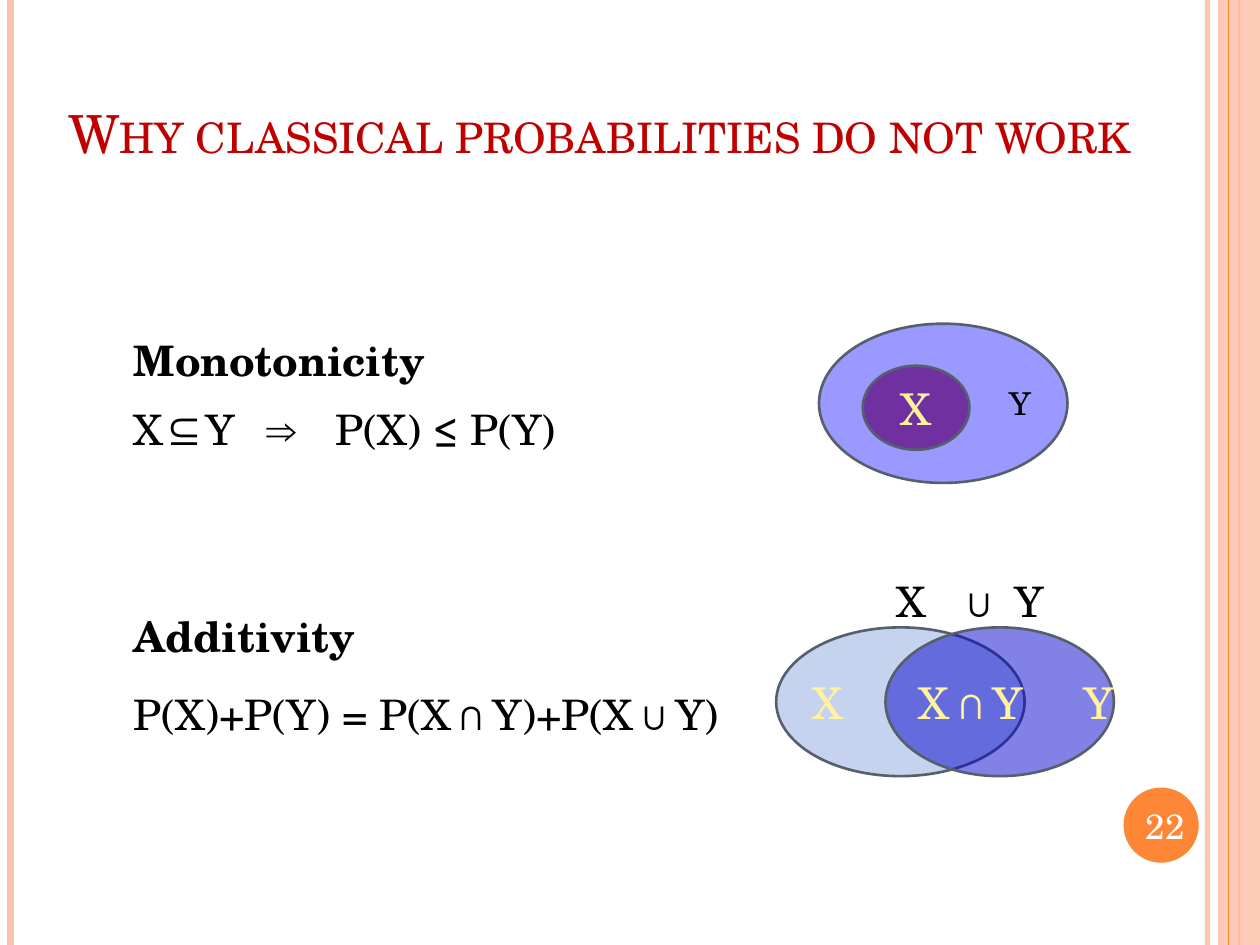
from lxml.etree import SubElement
from pptx import Presentation
from pptx.dml.color import RGBColor
from pptx.enum.shapes import MSO_CONNECTOR as CONNECTOR, MSO_SHAPE as SHAPE
from pptx.enum.text import MSO_ANCHOR as ANCHOR, PP_ALIGN as ALIGN
from pptx.oxml.ns import qn
from pptx.util import Pt

FONT = "TeX Gyre Schola"
WIDTH, HEIGHT = 720, 540
COLORS = {
    "title": "C00000", "body": "000000", "number": "FFFFFF", "label": "FFF39D",
    "peach": "FEC3AE", "orange": "FE8637", "outline": "575F6D",
    "superset": "9999FF", "subset": "7030A0", "set_x": "7598D9", "set_y": "0000CC",
}


def rgb(name):
    return RGBColor.from_string(COLORS[name])


def set_alpha(fill_or_line, percent):
    color = next(fill_or_line.iter(qn("a:srgbClr")))
    SubElement(color, qn("a:alpha")).set("val", str(percent * 1000))


def style(paragraph, size, color, bold=False, align=ALIGN.LEFT):
    paragraph.alignment = align
    for run in paragraph.runs:
        run.font.name, run.font.size, run.font.bold = FONT, Pt(size), bold
        run.font.color.rgb = rgb(color)


def set_tabs(paragraph, stops):
    tab_list = SubElement(paragraph._p.get_or_add_pPr(), qn("a:tabLst"))
    for stop in stops:
        tab = SubElement(tab_list, qn("a:tab"))
        tab.set("pos", str(Pt(stop)))
        tab.set("algn", "l")


def prepare_frame(frame, anchor=ANCHOR.MIDDLE, wrap=True):
    frame.word_wrap = wrap
    frame.vertical_anchor = anchor
    frame.margin_left = frame.margin_right = frame.margin_top = frame.margin_bottom = 0
    return frame


def add_text(slide, box, text, size, color, anchor=ANCHOR.MIDDLE, align=ALIGN.LEFT):
    frame = prepare_frame(slide.shapes.add_textbox(*map(Pt, box)).text_frame, anchor)
    frame.text = text
    style(frame.paragraphs[0], size, color, align=align)
    return frame.paragraphs[0]


def add_filled(slide, kind, box, fill, alpha=None, outlined=False):
    shape = slide.shapes.add_shape(kind, *map(Pt, box))
    shape.shadow.inherit = False
    shape.fill.solid()
    shape.fill.fore_color.rgb = rgb(fill)
    if alpha:
        set_alpha(shape._element.spPr, alpha)
    if outlined:
        shape.line.color.rgb = rgb("outline")
        shape.line.width = Pt(1.5)
    else:
        shape.line.fill.background()
    return shape


def write_in(shape, text, size, color, align=ALIGN.CENTER):
    frame = prepare_frame(shape.text_frame, wrap=True)
    frame.text = text
    style(frame.paragraphs[0], size, color, align=align)
    return frame


def add_rule(slide, x, width, color, alpha=None):
    rule = slide.shapes.add_connector(CONNECTOR.STRAIGHT, Pt(x), 0, Pt(x), Pt(HEIGHT))
    rule.line.color.rgb = rgb(color)
    rule.line.width = Pt(width)
    if alpha:
        set_alpha(rule._element.spPr, alpha)
    SubElement(rule._element.spPr, qn("a:effectLst"))


def add_frame_decoration(slide):
    add_rule(slide, 690, 3, "peach", 93)
    add_rule(slide, 6, 4.5, "peach")
    add_rule(slide, 708, 1.5, "orange")
    add_filled(slide, SHAPE.RECTANGLE, (696, 0, WIDTH - 696, HEIGHT), "peach", 87)
    add_rule(slide, 702, 0.75, "orange")


def add_page_number(slide, box, number):
    badge = add_filled(slide, SHAPE.OVAL, box, "orange")
    write_in(badge, number, 20, "number").margin_left = Pt(5)


def add_title(slide, box, text):
    title = add_text(slide, box, text, 30, "title", ANCHOR.BOTTOM)
    title.runs[0].font._element.set("cap", "small")


def add_law(slide, box, name, formula, gap, tabs=()):
    heading = add_text(slide, box, name, 24, "body", ANCHOR.TOP)
    heading.runs[0].font.bold = True
    heading.space_after = Pt(gap)
    statement = slide.shapes[-1].text_frame.add_paragraph()
    statement.text = formula
    style(statement, 24, "body")
    if tabs:
        set_tabs(statement, tabs)


def add_subset_diagram(slide, box):
    left, top, _, _ = box
    superset = add_filled(slide, SHAPE.OVAL, box, "superset", outlined=True)
    write_in(superset, "Y", 18, "body", ALIGN.RIGHT)
    inner_box = (left + 25, top + 24, 61, 48)
    subset = add_filled(slide, SHAPE.OVAL, inner_box, "subset", outlined=True)
    write_in(subset, "X", 25, "label")


def add_overlap_diagram(slide, box):
    left, top, width, height = box
    x_width, y_width = 142, 130.5
    add_filled(slide, SHAPE.OVAL, (left, top, x_width, height), "set_x", 42, True)
    y_box = (left + width - y_width, top, y_width, height)
    add_filled(slide, SHAPE.OVAL, y_box, "set_y", 49, True)

    # Region labels, centred on their offset from the left edge
    label_width = 80
    for text, center in (("X", 29.5), ("X∩Y", 111.5), ("Y", 184.5)):
        label_box = (left + center - label_width / 2, top, label_width, height)
        add_text(slide, label_box, text, 25, "label", align=ALIGN.CENTER)

    # Union caption above both sets
    union = add_text(slide, (left + 69, top - 37, 100, 44), "X\t∪\tY", 24, "body")
    set_tabs(union, (35, 67.5))


def main():
    prs = Presentation()
    prs.slide_width, prs.slide_height = Pt(WIDTH), Pt(HEIGHT)
    slide = prs.slides.add_slide(prs.slide_layouts[6])

    add_frame_decoration(slide)
    add_page_number(slide, (642, 450, 43, 43), "22")
    add_title(slide, (39, 28, 622, 65.5), "Why classical probabilities do not work")

    # Each law beside its diagram
    add_law(slide, (76.5, 191, 345.5, 80), "Monotonicity",
            "X⊆Y\t⇒\tP(X) ≤ P(Y)", 10.8, (76, 115.5))
    add_subset_diagram(slide, (468, 185, 142, 91))
    add_law(slide, (76.5, 349, 345.5, 80), "Additivity",
            "P(X)+P(Y) = P(X∩Y)+P(X∪Y)", 15.8)
    add_overlap_diagram(slide, (443.5, 358.5, 193, 85))

    prs.save("out.pptx")


if __name__ == "__main__":
    main()
